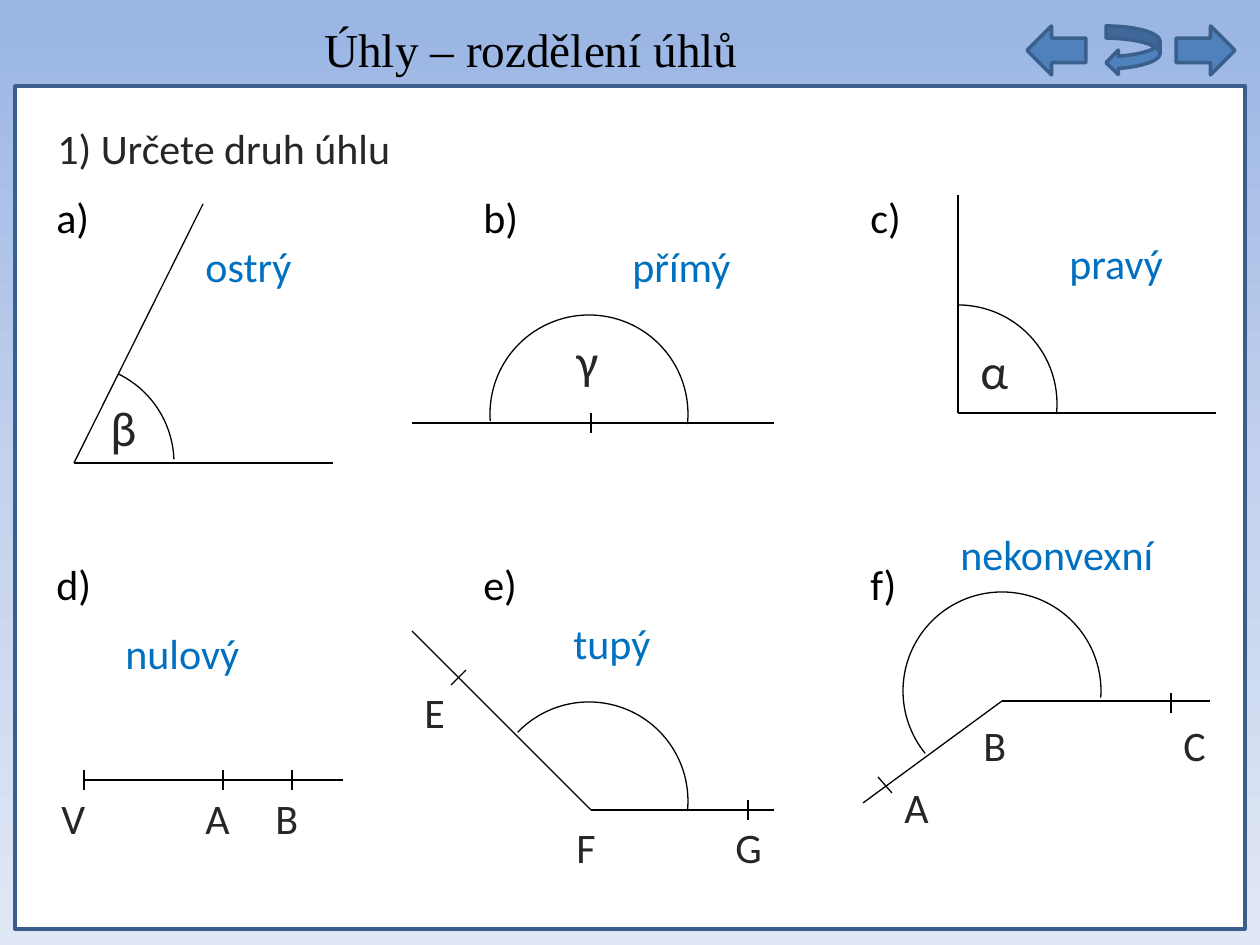
from copy import deepcopy
from dataclasses import dataclass

from lxml import etree
from pptx import Presentation
from pptx.dml.color import RGBColor
from pptx.enum.shapes import MSO_CONNECTOR, MSO_SHAPE
from pptx.enum.text import MSO_ANCHOR, PP_ALIGN
from pptx.oxml.ns import qn
from pptx.util import Pt

EMU_PER_PX = 914400 / 126
RECTANGLE = MSO_SHAPE.RECTANGLE
ARC = MSO_SHAPE.ARC
LEFT_ARROW = MSO_SHAPE.LEFT_ARROW
RIGHT_ARROW = MSO_SHAPE.RIGHT_ARROW
RETURN_ARROW = MSO_SHAPE.CURVED_LEFT_ARROW
STRAIGHT = MSO_CONNECTOR.STRAIGHT
CENTER = PP_ALIGN.CENTER
TOP = MSO_ANCHOR.TOP


@dataclass(frozen=True)
class Theme:
    title_font: str = "Times New Roman"
    body_font: str = "Calibri"
    black: str = "000000"
    text: str = "262626"
    answer: str = "0070C0"
    panel: str = "FFFFFF"
    button: str = "4F81BD"
    border: str = "3A5F8C"
    gradient: tuple = ("9AB5E4", "C2D1ED", "E1E8F5")
    title_size: float = 27
    body_size: float = 24
    greek_size: float = 28
    thin: float = 0.75
    thick: float = 2


THEME = Theme()
ARC_SIZE = 198
ARC_ROTATION = 6.9
LABEL_SIZE = (89, 88)
LETTER_SIZE = (65, 64)
GREEK_SIZE = (65, 72)
ANSWER_HEIGHT = 64

COLUMNS = (44, 471, 858)
ROWS = (185, 552)
PROBLEMS = (
    {
        "label": "a)", "answer": ("ostrý", 149, 49, 159),
        "lines": ((289, 278, 30, 278), (159, 19, 30, 278)),
        "arc": (-68, 179, 289, 351), "greek": ("β", 54, 206),
    },
    {
        "label": "b)", "answer": ("přímý", 149, 49, 159),
        "lines": ((303, 238, -59, 238), (120, 228, 120, 248)),
        "arc": (19, 130, 169, 359), "greek": ("γ", 93, 139),
    },
    {
        "label": "c)", "answer": ("pravý", 199, 46, 159),
        "lines": ((358, 228, 100, 228), (100, 10, 100, 228)),
        "arc": (1, 120, 263, 359), "greek": ("α", 110, 149),
    },
    {
        "label": "d)", "answer": ("nulový", 69, 69, 179),
        "lines": ((299, 228, 40, 228), (40, 218, 40, 238),
                  (179, 218, 179, 238), (248, 218, 248, 238)),
        "letters": (("V", 5, 234), ("A", 149, 234), ("B", 219, 234)),
    },
    {
        "label": "e)", "answer": ("tupý", 90, 59, 179),
        "lines": ((303, 258, 120, 258), (120, 258, -59, 79),
                  (277, 248, 277, 268), (-5, 118, -20, 133)),
        "arc": (19, 150, 217, 359),
        "letters": (("E", -59, 128), ("F", 93, 263), ("G", 252, 263)),
    },
    {
        "label": "f)", "answer": ("nekonvexní", 90, -30, 268),
        "lines": ((352, 149, 144, 149), (5, 251, 144, 149),
                  (313, 141, 313, 161), (20, 225, 34, 241)),
        "arc": (45, 40, 134, 357),
        "letters": (("A", 34, 223), ("B", 113, 161), ("C", 313, 161)),
    },
)


def px(*lengths):
    return [round(length * EMU_PER_PX) for length in lengths]


def color(value):
    return RGBColor.from_string(value)


def format_text(shape, text, size, font, font_color):
    frame = shape.text_frame
    frame.word_wrap = True
    frame.vertical_anchor = TOP
    frame.text = text
    run_font = frame.paragraphs[0].runs[0].font
    run_font.name = font
    run_font.size = Pt(size)
    run_font.color.rgb = color(font_color)


def add_text(slide, box, text, font_color, size=THEME.body_size):
    shape = slide.shapes.add_textbox(*px(*box))
    format_text(shape, text, size, THEME.body_font, font_color)


def add_shape(slide, kind, box, fill, line, width):
    shape = slide.shapes.add_shape(kind, *px(*box))
    shape.shadow.inherit = False
    if fill:
        shape.fill.solid()
        shape.fill.fore_color.rgb = color(fill)
    else:
        shape.fill.background()
    shape.line.color.rgb = color(line)
    shape.line.width = Pt(width)
    return shape


def add_line(slide, ends):
    connector = slide.shapes.add_connector(STRAIGHT, *px(*ends))
    connector.line.color.rgb = color(THEME.black)
    connector.line.width = Pt(THEME.thin)
    etree.SubElement(connector.element.spPr, qn("a:effectLst"))


def add_arc(slide, box, start, end):
    arc = add_shape(slide, ARC, box, None, THEME.black, THEME.thin)
    arc.rotation = ARC_ROTATION
    for index, angle in enumerate((start, end)):
        arc.adjustments[index] = angle * 0.6


def draw_background(slide):
    fill = slide.background.fill
    fill.gradient()
    fill.gradient_angle = 270
    stop_list = next(slide.element.iter(qn("a:gsLst")))
    stop_list.insert(1, deepcopy(stop_list[0]))
    for index, stop in enumerate(fill.gradient_stops):
        stop.position = index / 2
        stop.color.rgb = color(THEME.gradient[index])


def draw_title(slide, box):
    title = slide.shapes.title
    title.left, title.top, title.width, title.height = px(*box)
    format_text(title, "Úhly – rozdělení úhlů", THEME.title_size,
                THEME.title_font, THEME.black)
    title.text_frame.paragraphs[0].alignment = CENTER


def draw_navigation(slide, box):
    left, top, width, height = box
    buttons = ((LEFT_ARROW, 0, 59), (RETURN_ARROW, 79, 54),
               (RIGHT_ARROW, width - 59, 59))
    for kind, offset, button_width in buttons:
        add_shape(slide, kind, (left + offset, top, button_width, height),
                  THEME.button, THEME.border, THEME.thick)


def draw_problem(slide, origin, problem):
    left, top = origin

    def place(x, y, size):
        return (left + x, top + y, *size)

    add_text(slide, place(0, 0, LABEL_SIZE), problem["label"], THEME.black)
    for x1, y1, x2, y2 in problem["lines"]:
        add_line(slide, (left + x1, top + y1, left + x2, top + y2))
    if "arc" in problem:
        x, y, start, end = problem["arc"]
        add_arc(slide, place(x, y, (ARC_SIZE, ARC_SIZE)), start, end)
    if "greek" in problem:
        text, x, y = problem["greek"]
        add_text(slide, place(x, y, GREEK_SIZE), text, THEME.text,
                 THEME.greek_size)
    for text, x, y in problem.get("letters", ()):
        add_text(slide, place(x, y, LETTER_SIZE), text, THEME.text)
    text, x, y, width = problem["answer"]
    add_text(slide, place(x, y, (width, ANSWER_HEIGHT)), text, THEME.answer)


def main():
    presentation = Presentation()
    presentation.slide_width, presentation.slide_height = px(1260, 945)
    slide = presentation.slides.add_slide(presentation.slide_layouts[5])
    draw_background(slide)
    add_shape(slide, RECTANGLE, (15, 86, 1230, 843), THEME.panel,
              THEME.border, THEME.thick)
    draw_title(slide, (15, 14, 1032, 72))
    draw_navigation(slide, (1027, 26, 208, 49))
    add_text(slide, (45, 116, 883, 88), "1) Určete druh úhlu", THEME.text)
    origins = [(column, row) for row in ROWS for column in COLUMNS]
    for origin, problem in zip(origins, PROBLEMS):
        draw_problem(slide, origin, problem)
    presentation.save("out.pptx")


if __name__ == "__main__":
    main()
